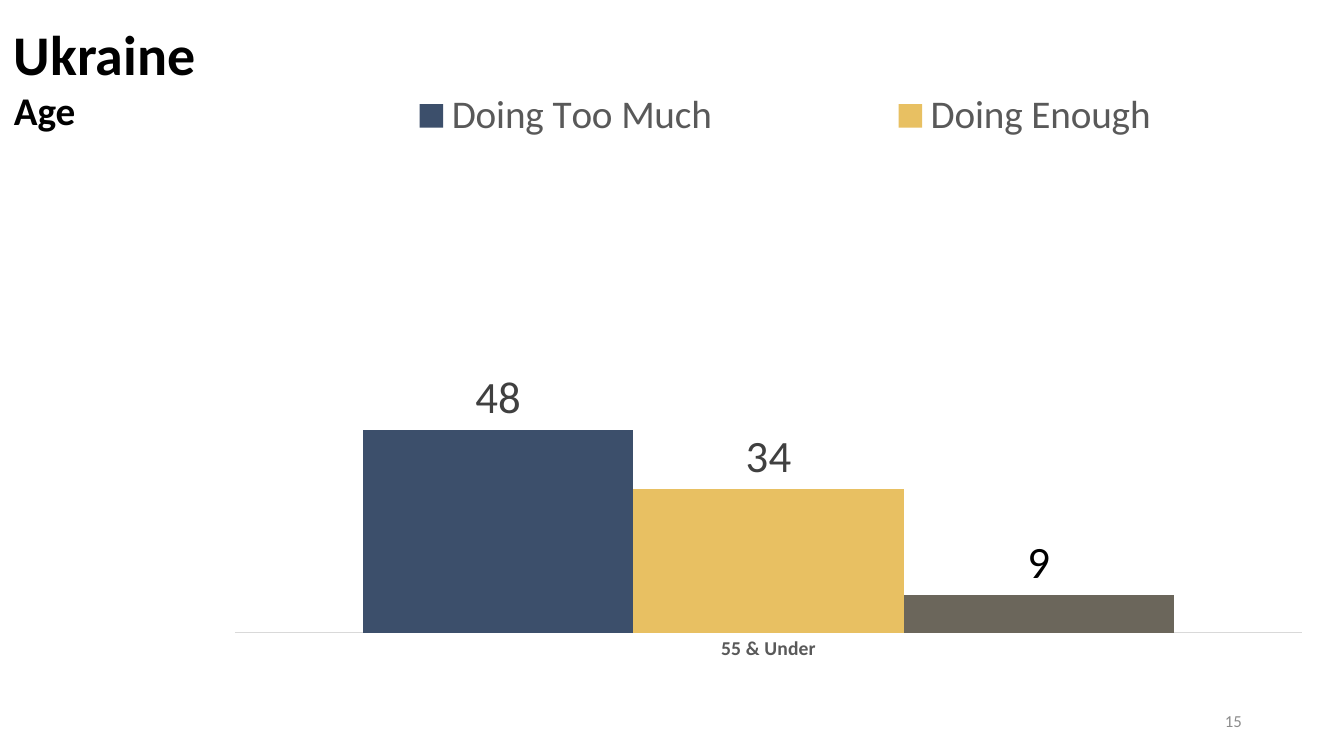
"""Build a slide with a column chart of views on Ukraine by age."""
from dataclasses import dataclass

from lxml.etree import SubElement
from pptx import Presentation
from pptx.chart.chart import Chart
from pptx.chart.data import CategoryChartData
from pptx.dml.color import RGBColor
from pptx.enum.chart import (XL_CHART_TYPE, XL_LABEL_POSITION,
                             XL_LEGEND_POSITION, XL_TICK_MARK)
from pptx.enum.text import MSO_ANCHOR, PP_ALIGN
from pptx.oxml.ns import qn
from pptx.slide import Slide
from pptx.text.text import Font
from pptx.util import Cm, Pt

FACE = "Calibri"
BLACK = RGBColor(0x00, 0x00, 0x00)
DARK = RGBColor(0x40, 0x40, 0x40)
GRAY = RGBColor(0x59, 0x59, 0x59)
PALE = RGBColor(0x8C, 0x8C, 0x8C)
RULE = RGBColor(0xD9, 0xD9, 0xD9)
NAVY = RGBColor(0x3C, 0x4F, 0x6B)
GOLD = RGBColor(0xE8, 0xC0, 0x62)
OLIVE = RGBColor(0x6B, 0x66, 0x5B)


@dataclass
class Answer:
    """One answer of the poll and its colours; no name, no legend entry."""
    name: str
    share: int
    fill: RGBColor
    ink: RGBColor


@dataclass
class Note:
    """A text box with one size for each line; lengths in centimetres."""
    left: float
    top: float
    width: float
    height: float
    lines: dict[str, int]
    ink: RGBColor
    bold: bool
    align: PP_ALIGN
    anchor: MSO_ANCHOR


ANSWERS = [
    Answer("Doing Too Much", 48, NAVY, DARK),
    Answer("Doing Enough", 34, GOLD, DARK),
    Answer("", 9, OLIVE, BLACK),
]
NOTES = [
    Note(0.1, 0.36, 20.98, 4.88, {"Ukraine": 40, "Age": 28}, BLACK, True,
         PP_ALIGN.LEFT, MSO_ANCHOR.TOP),
    Note(23.93, 17.65, 7.62, 1.02, {"15": 12}, PALE, False,
         PP_ALIGN.RIGHT, MSO_ANCHOR.MIDDLE),
]


def style(font: Font, size: int, ink: RGBColor, bold: bool = False) -> None:
    """Set face, size, colour and weight."""
    font.name = FACE
    font.size = Pt(size)
    font.color.rgb = ink
    font.bold = bold


def place(part, index: int, inner: bool, **box: float) -> None:
    """Fix the place of a chart part as shares of the chart."""
    for old in part.findall(qn("c:layout")):
        part.remove(old)
    layout = SubElement(part, qn("c:layout"))
    part.insert(index, layout)
    manual = SubElement(layout, qn("c:manualLayout"))
    if inner:
        SubElement(manual, qn("c:layoutTarget")).set("val", "inner")
    for key in "xy":
        SubElement(manual, qn(f"c:{key}Mode")).set("val", "edge")
    for key, share in box.items():
        SubElement(manual, qn(f"c:{key}")).set("val", str(share))


def add_note(slide: Slide, note: Note) -> None:
    """Draw one text box."""
    box = slide.shapes.add_textbox(Cm(note.left), Cm(note.top),
                                   Cm(note.width), Cm(note.height))
    frame = box.text_frame
    frame.word_wrap = True
    frame.vertical_anchor = note.anchor
    frame.text = "\n".join(note.lines)
    for line, size in zip(frame.paragraphs, note.lines.values()):
        line.alignment = note.align
        style(line.runs[0].font, size, note.ink, note.bold)


def set_axes(chart: Chart) -> None:
    """Show the age group and hide the value scale."""
    ages = chart.category_axis
    ages.major_tick_mark = XL_TICK_MARK.NONE
    ages.format.line.color.rgb = RULE
    ages.format.line.width = Pt(0.75)
    style(ages.tick_labels.font, 14, GRAY, True)
    scale = chart.value_axis
    scale.minimum_scale = 0
    scale.maximum_scale = 100
    scale.has_major_gridlines = False
    scale.visible = False


def set_legend(chart: Chart) -> None:
    """Set the legend of named answers in one row above the columns."""
    chart.has_legend = True
    legend = chart.legend
    legend.position = XL_LEGEND_POSITION.TOP
    legend.include_in_layout = False
    style(legend.font, 28, GRAY)
    root = legend._element
    place(root, 1, False, x=0.02, y=0.05, w=0.98, h=0.1)
    for index, answer in enumerate(ANSWERS):
        if not answer.name:
            entry = SubElement(root, qn("c:legendEntry"))
            SubElement(entry, qn("c:idx")).set("val", str(index))
            SubElement(entry, qn("c:delete")).set("val", "1")
            root.insert(1, entry)


def add_poll(slide: Slide) -> None:
    """Draw the column chart."""
    data = CategoryChartData()
    data.categories = ["55 & Under"]
    for answer in ANSWERS:
        data.add_series(answer.name, [answer.share])
    chart = slide.shapes.add_chart(
        XL_CHART_TYPE.COLUMN_CLUSTERED, Cm(5.64), Cm(1.35), Cm(27.74),
        Cm(15.7), data).chart
    chart.has_title = False
    style(chart.font, 10, BLACK)
    set_axes(chart)
    set_legend(chart)
    plot = chart.plots[0]
    plot.gap_width = 95
    plot.overlap = 0
    plot.vary_by_categories = False
    place(plot._element.getparent(), 0, True,
          x=0.01, y=0.25, w=0.97, h=0.68)
    for series, answer in zip(plot.series, ANSWERS):
        series.format.fill.solid()
        series.format.fill.fore_color.rgb = answer.fill
        labels = series.data_labels
        labels.show_value = True
        labels.position = XL_LABEL_POSITION.OUTSIDE_END
        style(labels.font, 32, answer.ink)


def main() -> None:
    """Build and save the deck."""
    deck = Presentation()
    deck.slide_width = Cm(33.87)
    deck.slide_height = Cm(19.05)
    slide = deck.slides.add_slide(deck.slide_layouts[6])
    add_poll(slide)
    for note in NOTES:
        add_note(slide, note)
    deck.save("out.pptx")


if __name__ == "__main__":
    main()
